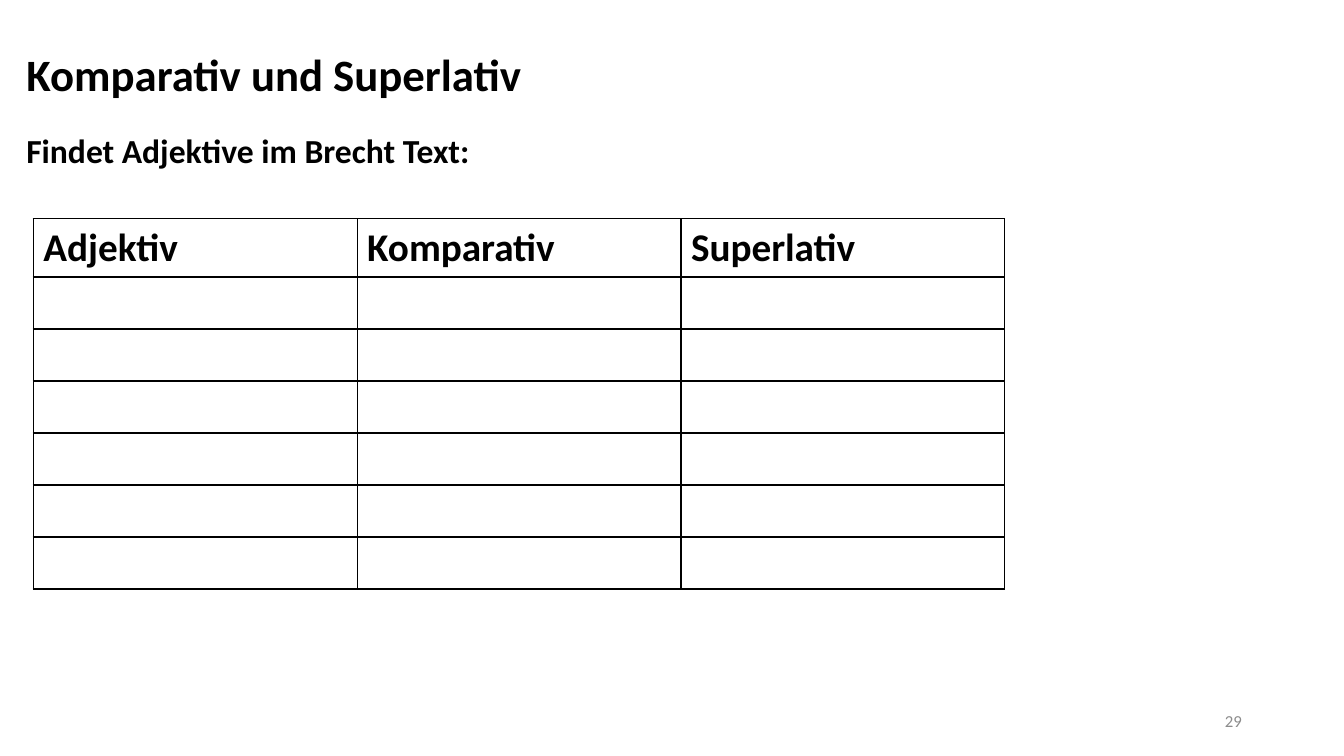
"""Build the slide on German comparatives and superlatives."""
from dataclasses import dataclass
from typing import Any

from lxml import etree
from pptx import Presentation
from pptx.dml.color import RGBColor
from pptx.enum.text import MSO_ANCHOR, MSO_AUTO_SIZE, PP_ALIGN
from pptx.oxml.ns import qn
from pptx.util import Cm, Pt

LEFT, RIGHT = PP_ALIGN.LEFT, PP_ALIGN.RIGHT
TOP, MIDDLE = MSO_ANCHOR.TOP, MSO_ANCHOR.MIDDLE
NO_AUTO_SIZE = MSO_AUTO_SIZE.NONE


@dataclass(frozen=True)
class Theme:
    """Fonts, type sizes, colours and line widths."""
    font: str = "Calibri"
    ink: str = "000000"
    muted: str = "8C8C8C"
    title_size: int = 32
    task_size: int = 24
    header_size: int = 28
    number_size: int = 12
    border: float = 1


@dataclass(frozen=True)
class TextBlock:
    """One line of text with its place in centimetres and its look."""
    text: str
    left: float
    top: float
    width: float
    height: float
    size: int
    color: str
    bold: bool = True
    anchor: Any = MIDDLE
    align: Any = LEFT
    line_spacing: float = 0.9
    space_before: float = 0


THEME = Theme()
TITLE = TextBlock("Komparativ und Superlativ", 0.41, 0.61, 29.18, 2.64,
                  THEME.title_size, THEME.ink)
TASK = TextBlock("Findet Adjektive im Brecht Text:", 0.41, 3.25, 32.84, 15.34,
                 THEME.task_size, THEME.ink, anchor=TOP, space_before=10)
PAGE_NUMBER = TextBlock("29", 23.93, 17.65, 7.62, 1.02, THEME.number_size,
                        THEME.muted, bold=False, align=RIGHT, line_spacing=1)
HEADERS = ("Adjektiv", "Komparativ", "Superlativ")
BLANK_ROWS = 6
TABLE_LEFT, TABLE_TOP = 0.84, 5.51
COLUMN_WIDTH, HEADER_HEIGHT, ROW_HEIGHT = 8.16, 1.47, 1.31


def apply_format(target: Any, values: dict[str, Any]) -> None:
    """Set every named attribute on the target."""
    for name, value in values.items():
        setattr(target, name, value)


def write_span(para: Any, text: str, size: int, color: str, bold: bool) -> None:
    """Add one formatted span to a paragraph."""
    span = para.add_run()
    span.text = text
    apply_format(span.font, {"name": THEME.font, "size": Pt(size), "bold": bold})
    span.font.color.rgb = RGBColor.from_string(color)


def fill_box(box: Any, block: TextBlock) -> None:
    """Place a box and write its text without a bullet."""
    apply_format(box, {"left": Cm(block.left), "top": Cm(block.top),
                       "width": Cm(block.width), "height": Cm(block.height)})
    frame = box.text_frame
    apply_format(frame, {"word_wrap": True, "auto_size": NO_AUTO_SIZE,
                         "vertical_anchor": block.anchor})
    para = frame.paragraphs[0]
    apply_format(para, {"alignment": block.align,
                        "line_spacing": block.line_spacing,
                        "space_before": Pt(block.space_before)})
    properties = para._p.get_or_add_pPr()
    properties.set("marL", "0")
    properties.set("indent", "0")
    etree.SubElement(properties, qn("a:buNone"))
    write_span(para, block.text, block.size, block.color, block.bold)


def draw_borders(cell: Any) -> None:
    """Outline a cell on all four sides."""
    properties = cell._tc.get_or_add_tcPr()
    for side in ("a:lnL", "a:lnR", "a:lnT", "a:lnB"):
        line = etree.SubElement(properties, qn(side), w=str(Pt(THEME.border)))
        fill = etree.SubElement(line, qn("a:solidFill"))
        etree.SubElement(fill, qn("a:srgbClr"), val=THEME.ink)


def add_adjective_table(page: Any) -> None:
    """Add the headed table with blank rows to fill in."""
    table = page.shapes.add_table(
        BLANK_ROWS + 1, len(HEADERS), Cm(TABLE_LEFT), Cm(TABLE_TOP),
        Cm(COLUMN_WIDTH * len(HEADERS)),
        Cm(HEADER_HEIGHT + ROW_HEIGHT * BLANK_ROWS)).table
    apply_format(table, {"first_row": False, "horz_banding": False})
    for column in table.columns:
        column.width = Cm(COLUMN_WIDTH)
    for index, row in enumerate(table.rows):
        row.height = Cm(ROW_HEIGHT if index else HEADER_HEIGHT)
    for cell in table.iter_cells():
        draw_borders(cell)
        cell.fill.background()
    for cell, header in zip(table.rows[0].cells, HEADERS):
        write_span(cell.text_frame.paragraphs[0], header,
                   THEME.header_size, THEME.ink, True)


def main() -> None:
    """Build and save the deck."""
    deck = Presentation()
    apply_format(deck, {"slide_width": Cm(33.87), "slide_height": Cm(19.05)})
    page = deck.slides.add_slide(deck.slide_layouts[1])
    fill_box(page.shapes.title, TITLE)
    fill_box(page.placeholders[1], TASK)
    add_adjective_table(page)
    fill_box(page.shapes.add_textbox(0, 0, 0, 0), PAGE_NUMBER)
    deck.save("out.pptx")


if __name__ == "__main__":
    main()
